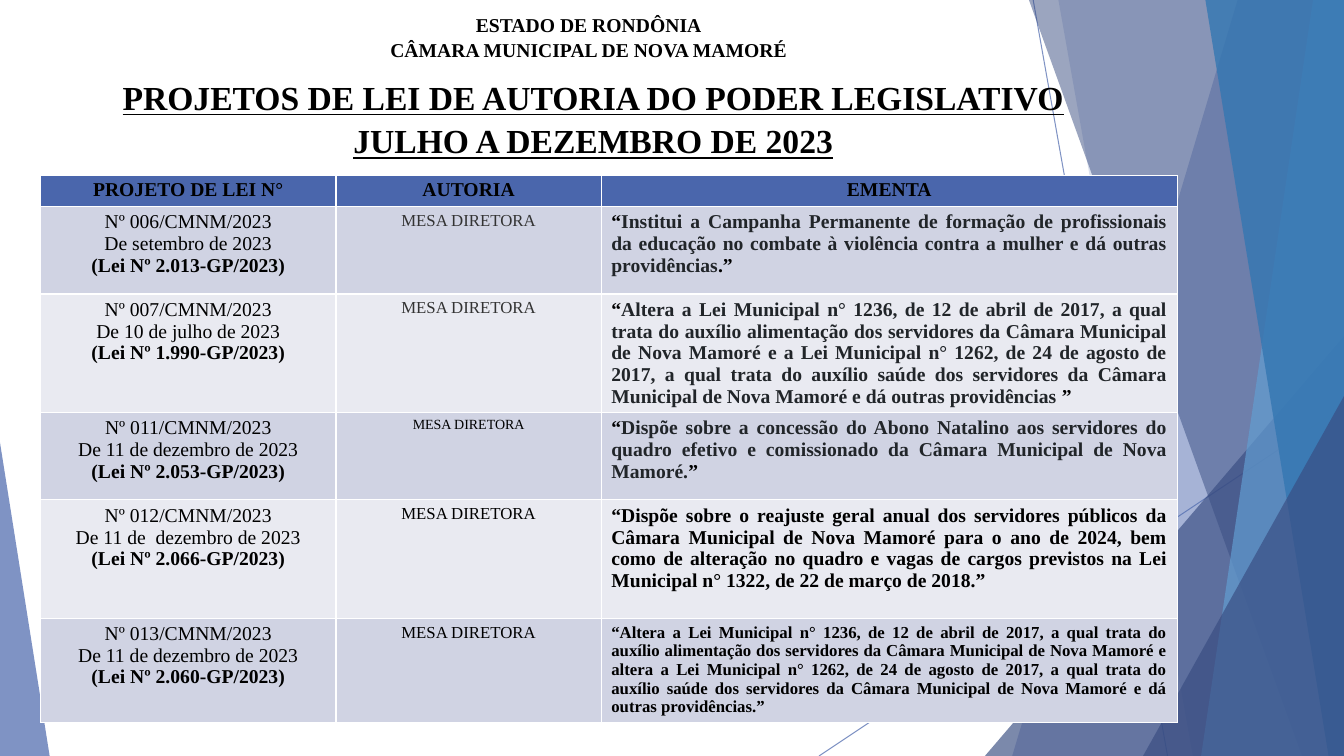
from lxml.etree import SubElement
from pptx import Presentation
from pptx.dml.color import RGBColor
from pptx.enum.shapes import MSO_CONNECTOR, MSO_SHAPE
from pptx.enum.text import MSO_ANCHOR, PP_ALIGN
from pptx.oxml.ns import qn
from pptx.util import Pt

FONT = "Times New Roman"
WIDTH, HEIGHT = 960, 540
BLUE, NAVY, BLACK, CHARCOAL = "4A66AC", "384C81", "000000", "212529"
BANDS = ("D0D3E3", "E9EAF1")
HEADERS = ("PROJETO DE LEI N°", "AUTORIA", "EMENTA")
COL_WIDTHS = (211, 189.5, 411.5)
ROW_HEIGHTS = (22, 62.5, 84.5, 62.5, 84.5, 74.5)
AUTHOR = "MESA DIRETORA"

# number, date, law, author size and colour, summary, closing mark, summary size and colour
BILLS = [
    ("Nº 006/CMNM/2023", "De setembro de 2023", "(Lei Nº 2.013-GP/2023)", 12, "333333",
     "Institui a Campanha Permanente de formação de profissionais da educação no combate "
     "à violência contra a mulher e dá outras providências", ".”", 14, CHARCOAL),
    ("Nº 007/CMNM/2023", "De 10 de julho de 2023", "(Lei Nº 1.990-GP/2023)", 12, "333333",
     "Altera a Lei Municipal n° 1236, de 12 de abril de 2017, a qual trata do auxílio "
     "alimentação dos servidores da Câmara Municipal de Nova Mamoré e a Lei Municipal "
     "n° 1262, de 24 de agosto de 2017, a qual trata do auxílio saúde dos servidores da "
     "Câmara Municipal de Nova Mamoré e dá outras providências ", "”", 14, CHARCOAL),
    ("Nº 011/CMNM/2023", "De 11 de dezembro de 2023", "(Lei Nº 2.053-GP/2023)", 10, BLACK,
     "Dispõe sobre a concessão do Abono Natalino aos servidores do quadro efetivo e "
     "comissionado da Câmara Municipal de Nova Mamoré.", "”", 14, CHARCOAL),
    ("Nº 012/CMNM/2023", "De 11 de  dezembro de 2023", "(Lei Nº 2.066-GP/2023)", 12, BLACK,
     "Dispõe sobre o reajuste geral anual dos servidores públicos da Câmara Municipal de "
     "Nova Mamoré para o ano de 2024, bem como de alteração no quadro e vagas de cargos "
     "previstos na Lei Municipal n° 1322, de 22 de março de 2018.", "”", 14, BLACK),
    ("Nº 013/CMNM/2023", "De 11 de dezembro de 2023", "(Lei Nº 2.060-GP/2023)", 12, BLACK,
     "Altera a Lei Municipal n° 1236, de 12 de abril de 2017, a qual trata do auxílio "
     "alimentação dos servidores da Câmara Municipal de Nova Mamoré e altera a Lei "
     "Municipal n° 1262, de 24 de agosto de 2017, a qual trata do auxílio saúde dos "
     "servidores da Câmara Municipal de Nova Mamoré e dá outras providências.", "”", 12, BLACK),
]


def paint(fmt, color, opacity=100):
    """Give a fill a solid colour with an opacity in percent."""
    fmt.solid()
    fmt.fore_color.rgb = RGBColor.from_string(color)
    if opacity < 100:
        clr = fmt._xPr.find(".//" + qn("a:srgbClr"))
        SubElement(clr, qn("a:alpha"), val=str(opacity * 1000))


def style_run(r, size, color=BLACK, bold=True, underline=False):
    r.font.name, r.font.size = FONT, Pt(size)
    r.font.bold, r.font.underline = bold, underline
    paint(r.font.fill, color)


def style_panel(sp, color, opacity):
    paint(sp.fill, color, opacity)
    sp.line.fill.background()
    sp.shadow.inherit = False


def add_ray(slide, x1, y1, x2, y2):
    line = slide.shapes.add_connector(
        MSO_CONNECTOR.STRAIGHT, Pt(x1), Pt(y1), Pt(x2), Pt(y2))
    line.line.width = Pt(0.75)
    paint(line.line.fill, BLUE, 70)
    SubElement(line._element.spPr, qn("a:effectLst"))


def add_panel(slide, top_x, bottom_x, color, opacity):
    """Fill the area between a slanted left edge and the right side of the slide."""
    builder = slide.shapes.build_freeform(Pt(top_x), 0)
    corners = ((WIDTH, 0), (WIDTH, HEIGHT), (bottom_x, HEIGHT))
    builder.add_line_segments([(Pt(x), Pt(y)) for x, y in corners])
    style_panel(builder.convert_to_shape(), color, opacity)


def add_wedge(slide, left, top, width, apex, color, opacity):
    """Stand a right triangle on the bottom of the slide; apex is 0 (left) or 1 (right)."""
    sp = slide.shapes.add_shape(MSO_SHAPE.ISOSCELES_TRIANGLE, Pt(left), Pt(top),
                                Pt(width), Pt(HEIGHT - top))
    sp.adjustments[0] = apex
    style_panel(sp, color, opacity)


def add_facets(slide):
    add_ray(slide, 738, 0, 834, HEIGHT)
    add_ray(slide, WIDTH, 290, 585, HEIGHT)
    add_panel(slide, 884, 723, BLUE, 36)
    add_panel(slide, 756, 852, BLUE, 20)
    add_wedge(slide, 703.5, 240, 256.5, 1, NAVY, 66)
    add_panel(slide, 735, 930, NAVY, 50)
    add_panel(slide, 938, 858, "629DD1", 70)
    add_panel(slide, 861, 949, "3477B2", 80)
    add_wedge(slide, 816.5, 283, 143.5, 1, NAVY, 66)
    add_wedge(slide, 0, 316, 35.5, 0, BLUE, 70)


def fill_heading(sp, text, left, top, width, height, size, underline=False):
    sp.left, sp.top, sp.width, sp.height = Pt(left), Pt(top), Pt(width), Pt(height)
    tf = sp.text_frame
    tf.word_wrap = True
    tf.vertical_anchor = MSO_ANCHOR.TOP
    tf.text = text
    p = tf.paragraphs[0]
    p.alignment, p.line_spacing = PP_ALIGN.CENTER, 1.07
    for r in p.runs:
        style_run(r, size, underline=underline)


def fill_cell(cell, lines, align, fill):
    """Write lines, each a list of (text, size, colour, bold) runs."""
    paint(cell.fill, fill)
    tf = cell.text_frame
    for i, line in enumerate(lines):
        p = tf.add_paragraph() if i else tf.paragraphs[0]
        p.alignment = align
        for text, *look in line:
            r = p.add_run()
            r.text = text
            style_run(r, *look)


def add_bills_table(slide, left, top):
    table = slide.shapes.add_table(
        len(ROW_HEIGHTS), len(COL_WIDTHS), Pt(left), Pt(top),
        Pt(sum(COL_WIDTHS)), Pt(sum(ROW_HEIGHTS))).table
    for col, width in zip(table.columns, COL_WIDTHS):
        col.width = Pt(width)
    for row, height in zip(table.rows, ROW_HEIGHTS):
        row.height = Pt(height)
    for cell, header in zip(table.rows[0].cells, HEADERS):
        cell.margin_left = cell.margin_right = Pt(5)
        cell.margin_top = cell.margin_bottom = 0
        fill_cell(cell, [[(header, 14, BLACK, True)]], PP_ALIGN.CENTER, BLUE)
        cell.text_frame.paragraphs[0].line_spacing = 1.15
    for i, bill in enumerate(BILLS):
        number, date, law, author_size, author_color, summary, end, size, color = bill
        bill_cell, author_cell, summary_cell = table.rows[i + 1].cells
        band = BANDS[i % 2]
        fill_cell(bill_cell, [[(number, 14, BLACK, False)], [(date, 14, BLACK, False)],
                              [(law, 14, BLACK, True)]], PP_ALIGN.CENTER, band)
        fill_cell(author_cell, [[(AUTHOR, author_size, author_color, False)]],
                  PP_ALIGN.CENTER, band)
        fill_cell(summary_cell, [[("“", size, BLACK, True), (summary, size, color, True),
                                  (end, size, BLACK, True)]], PP_ALIGN.JUSTIFY, band)


def build_bills_slide(prs):
    slide = prs.slides.add_slide(prs.slide_layouts[5])
    add_facets(slide)
    add_bills_table(slide, 29, 125.5)
    chamber = slide.shapes.add_textbox(0, 0, 0, 0)
    fill_heading(chamber, "ESTADO DE RONDÔNIA\vCÂMARA MUNICIPAL DE NOVA MAMORÉ",
                 180.5, 4.5, 480, 41, 14)
    title = slide.shapes.title
    fill_heading(title, "PROJETOS DE LEI DE AUTORIA DO PODER LEGISLATIVO "
                 "JULHO A DEZEMBRO DE 2023", 59, 49.5, 729.5, 65.5, 24, underline=True)
    slide.shapes._spTree.append(title._element)  # title in front of the facets


def main():
    prs = Presentation()
    prs.slide_width, prs.slide_height = Pt(WIDTH), Pt(HEIGHT)
    build_bills_slide(prs)
    prs.save("out.pptx")


if __name__ == "__main__":
    main()
